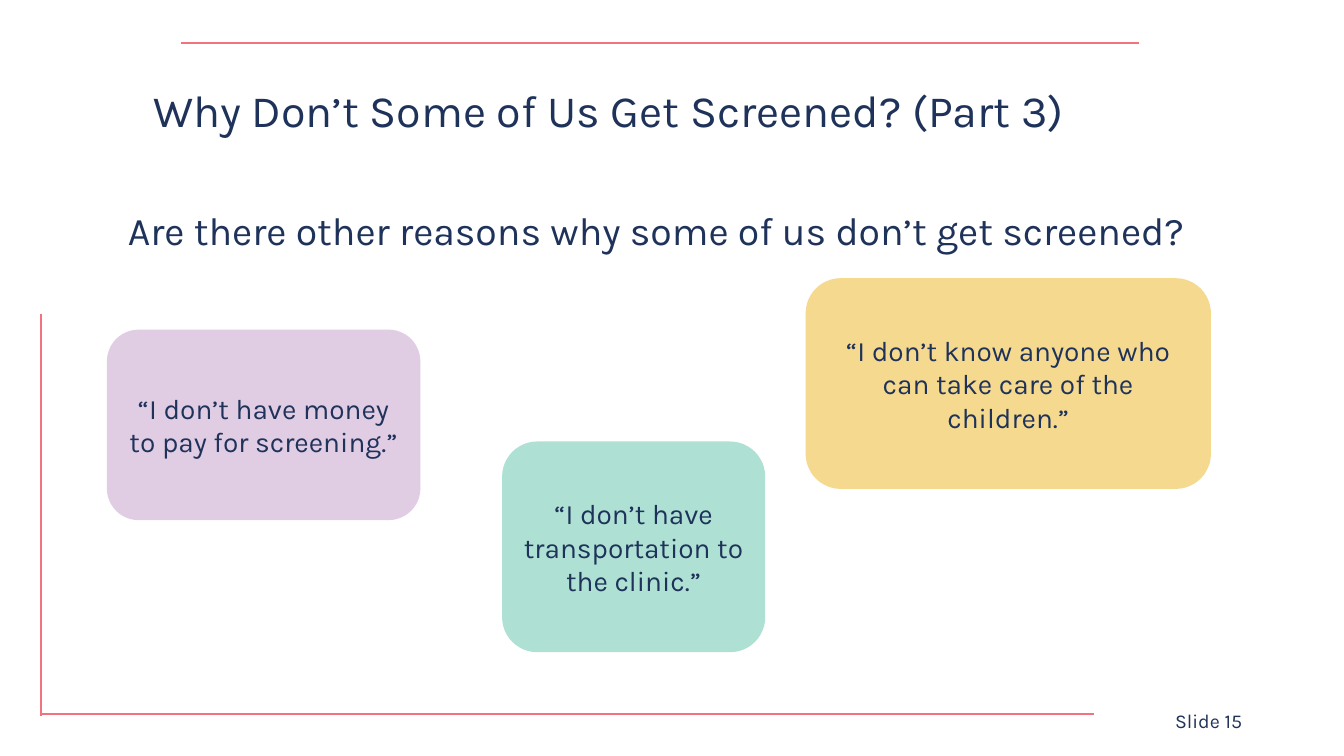
from dataclasses import dataclass

from lxml.etree import SubElement
from pptx import Presentation
from pptx.dml.color import RGBColor
from pptx.enum.shapes import MSO_CONNECTOR as Connector, MSO_SHAPE as Preset
from pptx.enum.text import MSO_ANCHOR as Anchor, MSO_AUTO_SIZE as AutoSize, PP_ALIGN as Align
from pptx.oxml.ns import qn
from pptx.shapes.autoshape import Shape
from pptx.slide import Slide
from pptx.util import Inches, Pt

FONT = "Karla"
COLORS = {
    "navy": "1E325A",
    "coral": "F0737F",
    "lilac": "D9C0DD",
    "mint": "9ADAC8",
    "yellow": "F3D072",
}


@dataclass(frozen=True)
class Box:
    left: float
    top: float
    width: float
    height: float


@dataclass(frozen=True)
class Rule:
    start: tuple[float, float]
    end: tuple[float, float]


@dataclass(frozen=True)
class Quote:
    box: Box
    color: str
    text: str


RULES = [
    Rule((0.41, 7.08), (10.85, 7.08)),
    Rule((0.41, 7.1), (0.41, 3.12)),
    Rule((1.8, 0.43), (11.3, 0.43)),
]
QUOTES = [
    Quote(Box(1.06, 3.27, 3.11, 1.89), "lilac", "“I don’t have money to pay for screening.”"),
    Quote(Box(4.98, 4.38, 2.61, 2.09), "mint", "“I don’t have transportation to the clinic.”"),
    Quote(Box(7.99, 2.76, 4.02, 2.09), "yellow",
          "“I don’t know anyone who can take care of the children.”"),
]


def rgb(name: str) -> RGBColor:
    return RGBColor.from_string(COLORS[name])


def lengths(box: Box) -> tuple[Inches, ...]:
    return tuple(Inches(n) for n in (box.left, box.top, box.width, box.height))


def write(shape: Shape, text: str, size: float, align: Align = Align.LEFT,
          anchor: Anchor = Anchor.MIDDLE, indent: float = 0, line_spacing: float = 1) -> None:
    frame = shape.text_frame
    frame.word_wrap = True
    frame.auto_size = AutoSize.NONE
    frame.vertical_anchor = anchor
    paragraph = frame.paragraphs[0]
    paragraph.alignment = align
    paragraph.line_spacing = line_spacing
    if indent:
        properties = paragraph._p.get_or_add_pPr()
        properties.set("marL", str(Inches(indent)))
        properties.set("indent", "0")
    run = paragraph.add_run()
    run.text = text
    run.font.name = FONT
    run.font.size = Pt(size)
    run.font.color.rgb = rgb("navy")


def add_rule(slide: Slide, rule: Rule) -> None:
    ends = [Inches(n) for n in (*rule.start, *rule.end)]
    connector = slide.shapes.add_connector(Connector.STRAIGHT, *ends)
    connector.line.color.rgb = rgb("coral")
    connector.line.width = Pt(1.5)
    SubElement(connector._element.spPr, qn("a:effectLst"))


def add_quote(slide: Slide, quote: Quote) -> None:
    card = slide.shapes.add_shape(Preset.ROUNDED_RECTANGLE, *lengths(quote.box))
    card.shadow.inherit = False
    card.line.fill.background()
    card.fill.solid()
    card.fill.fore_color.rgb = rgb(quote.color)
    color = card._element.spPr.find(qn("a:solidFill"))[0]
    SubElement(color, qn("a:alpha"), val="80000")
    write(card, quote.text, 20, Align.CENTER)


def main() -> None:
    presentation = Presentation()
    presentation.slide_width = Inches(13.33)
    presentation.slide_height = Inches(7.5)
    slide = presentation.slides.add_slide(presentation.slide_layouts[5])

    for rule in RULES:
        add_rule(slide, rule)

    title = slide.shapes.title
    title.left, title.top, title.width, title.height = lengths(Box(0.92, 0.4, 11.5, 1.45))
    write(title, "Why Don’t Some of Us Get Screened? (Part 3)", 32, indent=0.5, line_spacing=0.9)

    question = slide.shapes.add_textbox(*lengths(Box(0.92, 2, 11.5, 4.76)))
    write(question, "Are there other reasons why some of us don’t get screened?", 28,
          anchor=Anchor.TOP, indent=0.25)

    slide_label = slide.shapes.add_textbox(*lengths(Box(9.42, 6.95, 3, 0.4)))
    write(slide_label, "Slide 15", 14, Align.RIGHT)

    for quote in QUOTES:
        add_quote(slide, quote)

    presentation.save("out.pptx")


if __name__ == "__main__":
    main()
